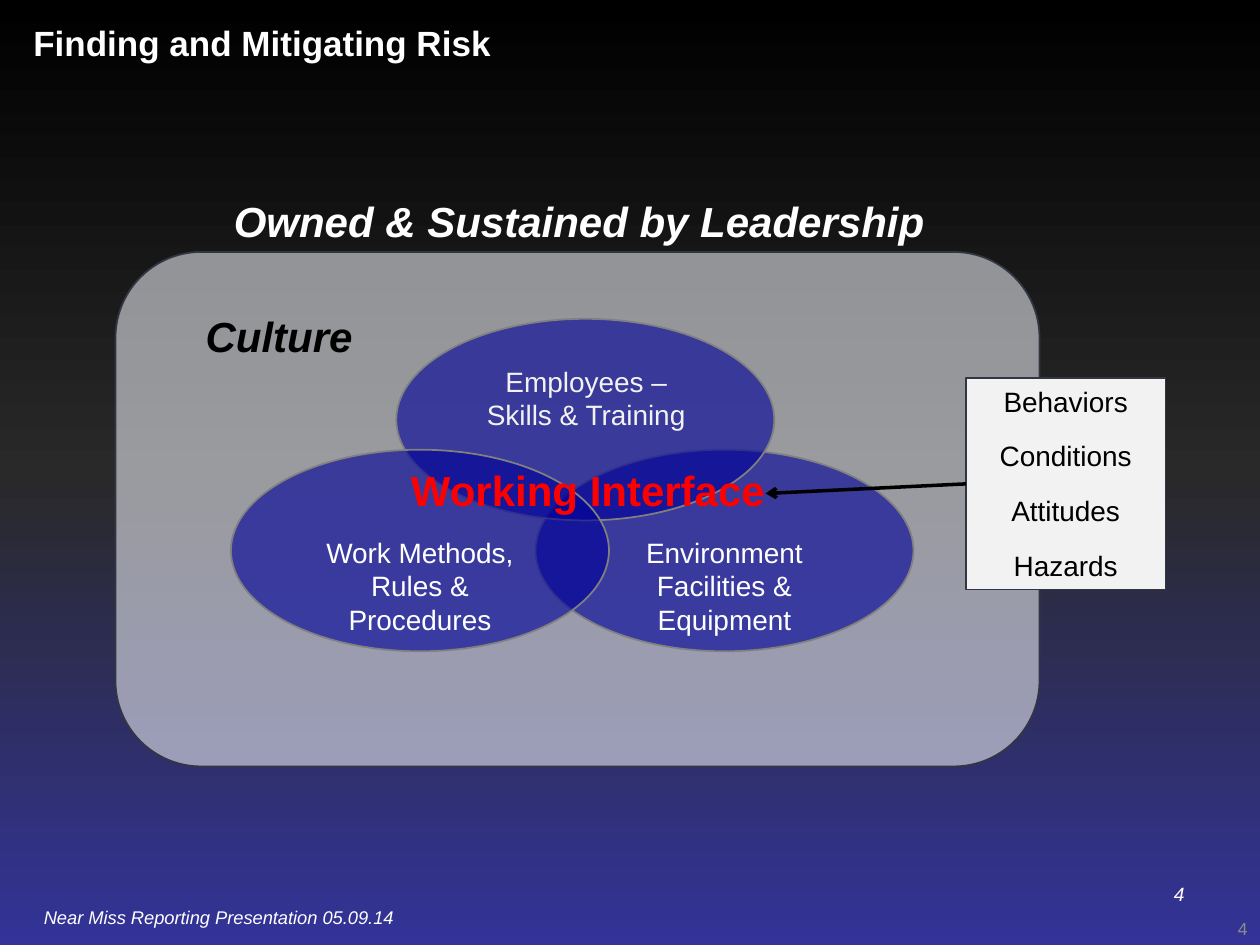
from copy import deepcopy

from lxml import etree
from pptx import Presentation
from pptx.dml.color import RGBColor
from pptx.enum.shapes import MSO_CONNECTOR, MSO_SHAPE
from pptx.enum.text import MSO_ANCHOR, PP_ALIGN
from pptx.oxml.ns import qn
from pptx.util import Pt

LEFT, CENTER, RIGHT = PP_ALIGN.LEFT, PP_ALIGN.CENTER, PP_ALIGN.RIGHT
TOP, MIDDLE = MSO_ANCHOR.TOP, MSO_ANCHOR.MIDDLE
OVAL, RECTANGLE = MSO_SHAPE.OVAL, MSO_SHAPE.RECTANGLE
ROUNDED = MSO_SHAPE.ROUNDED_RECTANGLE
STRAIGHT = MSO_CONNECTOR.STRAIGHT

FONT = "Arial"
ALPHA = 62
COLORS = {
    "white": "FFFFFF", "black": "000000", "pale": "F2F2F2", "red": "FF0000",
    "gray": "8C8C8C", "panel": "DFE1E7", "edge": "323643",
    "oval": "000099", "oval_edge": "808080",
    "middle": "292929", "bottom": "333399",
}


def color(name):
    """Return the named colour as an RGBColor."""
    return RGBColor.from_string(COLORS[name])


def write(shape, lines, size, ink, align=CENTER, anchor=TOP, bold=False, italic=False, gap=0):
    """Write one paragraph per line, all in the same style."""
    frame = shape.text_frame
    frame.word_wrap = True
    frame.vertical_anchor = anchor
    frame.text = "\n".join(lines)
    for para in frame.paragraphs:
        para.alignment = align
        para.space_before = para.space_after = Pt(gap)
        font = para.font
        font.name, font.size, font.bold, font.italic = FONT, Pt(size), bold, italic
        font.color.rgb = color(ink)


def add_label(page, box, text, size, ink, **style):
    """Add a text box holding a single paragraph."""
    label = page.shapes.add_textbox(*map(Pt, box))
    write(label, [text], size, ink, **style)
    return label


def add_form(page, kind, box, fill=None, edge=None, width=1, alpha=None):
    """Add a preset shape with optional fill, outline and opacity in percent."""
    form = page.shapes.add_shape(kind, *map(Pt, box))
    form.shadow.inherit = False
    if fill:
        form.fill.solid()
        form.fill.fore_color.rgb = color(fill)
    else:
        form.fill.background()
    if edge:
        form.line.color.rgb = color(edge)
        form.line.width = Pt(width)
    else:
        form.line.fill.background()
    if alpha:
        tint = form.element.spPr.find(qn("a:solidFill"))[0]
        etree.SubElement(tint, qn("a:alpha"), val=str(alpha * 1000))
    return form


def paint_background(page, names):
    """Fill the page from top to bottom with evenly spaced colour stops."""
    fill = page.background.fill
    fill.gradient()
    fill.gradient_angle = 270
    stop_list = page.element.find(".//" + qn("a:gsLst"))
    for _ in range(len(names) - len(stop_list)):
        stop_list.append(deepcopy(stop_list[0]))
    for index, (stop, name) in enumerate(zip(fill.gradient_stops, names)):
        stop.color.rgb = color(name)
        stop.position = index / (len(names) - 1)


def add_frame(page, width, height):
    """Add the title, the footer and both page numbers."""
    add_label(page, (12, 0, width - 12, 48), "Finding and Mitigating Risk",
              20, "white", align=LEFT, anchor=MIDDLE, bold=True)
    add_label(page, (18, height - 26, 390, 20), "Near Miss Reporting Presentation 05.09.14",
              10.5, "white", align=LEFT, italic=True)
    add_label(page, (width - 204, height - 48, 168, 37), "4",
              11, "white", align=RIGHT, anchor=MIDDLE, italic=True)
    add_label(page, (width - 30, height - 24, 30, 29), "4",
              10, "gray", align=RIGHT, anchor=MIDDLE)


def add_culture(page, left, top, width, height):
    """Add the culture panel with its heading and three overlapping ovals."""
    add_form(page, ROUNDED, (left, top, width, height), "panel", "edge", alpha=ALPHA)
    oval_width, oval_height = 216, 115.2
    ovals = (
        (240, 113, "Environment Facilities & Equipment"),
        (160.5, 38.2, None),
        (66, 113, "Work Methods, Rules & Procedures"),
    )
    for x, y, text in ovals:
        oval = add_form(page, OVAL, (left + x, top + y, oval_width, oval_height),
                        "oval", "oval_edge", alpha=ALPHA)
        if text:
            write(oval, [text], 16, "white")
            oval.text_frame.margin_top = Pt(32)
            oval.text_frame.margin_bottom = 0
    interface = add_form(page, OVAL, (left + 162, top + 78, oval_width, oval_height))
    write(interface, ["Working Interface"], 24, "red", anchor=MIDDLE, bold=True)
    interface.text_frame.word_wrap = False
    add_label(page, (left + 37, top + 30, 113, 36), "Culture",
              24, "black", bold=True, italic=True)
    add_label(page, (left + 197, top + 60.5, 144, 46), "Employees – Skills & Training",
              16, "pale")
    add_label(page, (left + 60, top - 36, 410, 36), "Owned & Sustained by Leadership",
              24, "white", bold=True, italic=True)


def add_factors(page, left, top, width, height):
    """Add the list of factors and its arrow to the working interface."""
    card = add_form(page, RECTANGLE, (left, top, width, height), "pale", "edge", 0.75)
    write(card, ["Behaviors", "Conditions", "Attitudes", "Hazards"], 16, "black", gap=6)
    middle = top + height / 2
    arrow = page.shapes.add_connector(
        STRAIGHT, Pt(left), Pt(middle), Pt(left - 114.5), Pt(middle + 5.5))
    arrow.begin_connect(card, 1)
    arrow.line.color.rgb = color("black")
    arrow.line.width = Pt(2)
    etree.SubElement(arrow.line._get_or_add_ln(), qn("a:tailEnd"), type="arrow")
    etree.SubElement(arrow.element.spPr, qn("a:effectLst"))


def main():
    """Build the slide and save the deck."""
    deck = Presentation()
    width, height = 720, 540
    deck.slide_width, deck.slide_height = Pt(width), Pt(height)
    page = deck.slides.add_slide(deck.slide_layouts[6])
    paint_background(page, ["black", "middle", "bottom"])
    add_frame(page, width, height)
    add_culture(page, 66, 144, 528, 294)
    add_factors(page, 552, 216, 114, 121)
    deck.save("out.pptx")


if __name__ == "__main__":
    main()
